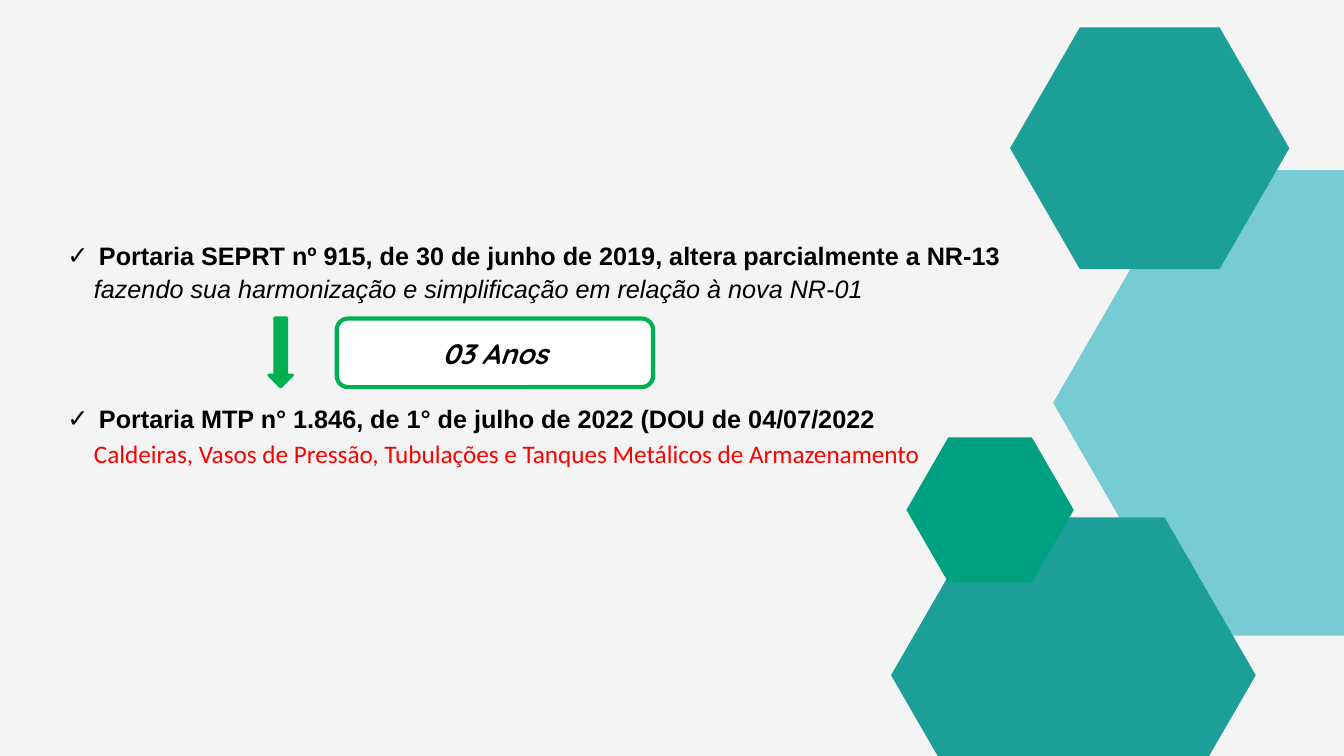
"""Builds the slide on the two ordinances that changed NR-13."""
from dataclasses import dataclass

from lxml import etree
from pptx import Presentation
from pptx.dml.color import RGBColor
from pptx.enum import shapes, text
from pptx.oxml import ns
from pptx.util import Pt

SLIDE_WIDTH, SLIDE_HEIGHT = 960, 540


@dataclass(frozen=True)
class Theme:
    """Colours and type sizes of the slide."""
    paper: str = "F4F4F4"
    white: str = "FFFFFF"
    ink: str = "000000"
    red: str = "FF0000"
    sky: str = "77CBD4"
    teal: str = "1C9E99"
    emerald: str = "00A181"
    green: str = "00B050"
    body_size: int = 18
    label_size: int = 20


THEME = Theme()


def paint(target, colour):
    """Give a fill one solid colour."""
    target.solid()
    target.fore_color.rgb = RGBColor.from_string(colour)


def write(paragraph, words, colour=THEME.ink, **formats):
    """Put words in a paragraph with the given font values."""
    paragraph.text = words
    values = {"name": "Arial", "size": Pt(THEME.body_size), "bold": False, "italic": False}
    for key, value in (values | formats).items():
        setattr(paragraph.font, key, value)
    paragraph.font.color.rgb = RGBColor.from_string(colour)


def add_hexagon(slide, left, top, width, colour):
    """Draw a regular hexagon cut off at the slide edges."""
    half = width * 3 ** 0.5 / 4
    middle = top + half
    bottom = min(middle + half, SLIDE_HEIGHT)
    inset = width / 4 * (bottom - middle) / half
    right = left + width
    corners = [(left + width / 4, top), (right - width / 4, top), (right, middle),
               (right - inset, bottom), (left + inset, bottom), (left, middle)]
    points = [(Pt(min(x, SLIDE_WIDTH)), Pt(y)) for x, y in corners]
    outline = slide.shapes.build_freeform(*points[0], scale=1.0)
    outline.add_line_segments(points[1:], close=True)
    hexagon = outline.convert_to_shape()
    hexagon.shadow.inherit = False
    paint(hexagon.fill, colour)
    hexagon.line.fill.background()


def add_ordinance(placeholder, top, words):
    """Turn a body placeholder into one ticked ordinance."""
    place = {"left": Pt(41), "top": Pt(top), "width": Pt(701), "height": Pt(29)}
    for key, value in place.items():
        setattr(placeholder, key, value)
    frame = placeholder.text_frame
    frame.auto_size = text.MSO_AUTO_SIZE.NONE
    frame.vertical_anchor = text.MSO_ANCHOR.TOP
    ordinance = frame.paragraphs[0]
    ordinance.line_spacing = 1.0
    ordinance.space_before = Pt(0)
    properties = ordinance._p.get_or_add_pPr()
    properties.set("marL", str(Pt(22.5)))
    properties.set("indent", str(Pt(-22.5)))
    etree.SubElement(properties, ns.qn("a:buFont"), typeface="Arial")
    etree.SubElement(properties, ns.qn("a:buChar"), char="✓")
    write(ordinance, words, bold=True)


def add_detail(slide, top, words, **formats):
    """Add the line that explains an ordinance."""
    detail = slide.shapes.add_textbox(Pt(60), Pt(top), Pt(637), Pt(29))
    detail.text_frame.word_wrap = True
    write(detail.text_frame.paragraphs[0], words, **formats)


def add_green_shape(slide, preset, place, fill, line_width):
    """Add a preset shape with a green outline."""
    shape = slide.shapes.add_shape(preset, *map(Pt, place))
    shape.shadow.inherit = False
    paint(shape.fill, fill)
    paint(shape.line.fill, THEME.green)
    shape.line.width = Pt(line_width)
    return shape


def main():
    """Build and save the slide."""
    deck = Presentation()
    deck.slide_width, deck.slide_height = Pt(SLIDE_WIDTH), Pt(SLIDE_HEIGHT)
    slide = deck.slides.add_slide(deck.slide_layouts.get_by_name("Two Content"))
    paint(slide.background.fill, THEME.paper)
    title = slide.shapes.title
    title.element.getparent().remove(title.element)

    for hexagon in ((752.25, 121.5, 384, THEME.sky),
                    (636.5, 369.5, 260.5, THEME.teal),
                    (647.5, 312.5, 119.5, THEME.emerald),
                    (721.5, 19.5, 199.5, THEME.teal)):
        add_hexagon(slide, *hexagon)

    first, second = slide.placeholders
    add_ordinance(first, 168,
                  "Portaria SEPRT nº 915, de 30 de junho de 2019, altera parcialmente a NR-13")
    add_detail(slide, 191.5,
               "fazendo sua harmonização e simplificação em relação à nova NR-01", italic=True)
    add_ordinance(second, 284.5,
                  "Portaria MTP n° 1.846, de 1° de julho de 2022 (DOU de 04/07/2022")
    add_detail(slide, 309.5,
               "Caldeiras, Vasos de Pressão, Tubulações e Tanques Metálicos de Armazenamento",
               colour=THEME.red, name="Calibri")

    preset = shapes.MSO_SHAPE
    add_green_shape(slide, preset.DOWN_ARROW, (192, 227, 17, 49.5), THEME.green, 2)
    interval = add_green_shape(slide, preset.ROUNDED_RECTANGLE, (240.5, 227.5, 226, 49),
                               THEME.white, 3)
    interval.text_frame.vertical_anchor = text.MSO_ANCHOR.MIDDLE
    years = interval.text_frame.paragraphs[0]
    years.alignment = text.PP_ALIGN.CENTER
    write(years, "03 Anos", name="Quicksand", size=Pt(THEME.label_size), bold=True, italic=True)

    deck.save("out.pptx")


if __name__ == "__main__":
    main()
